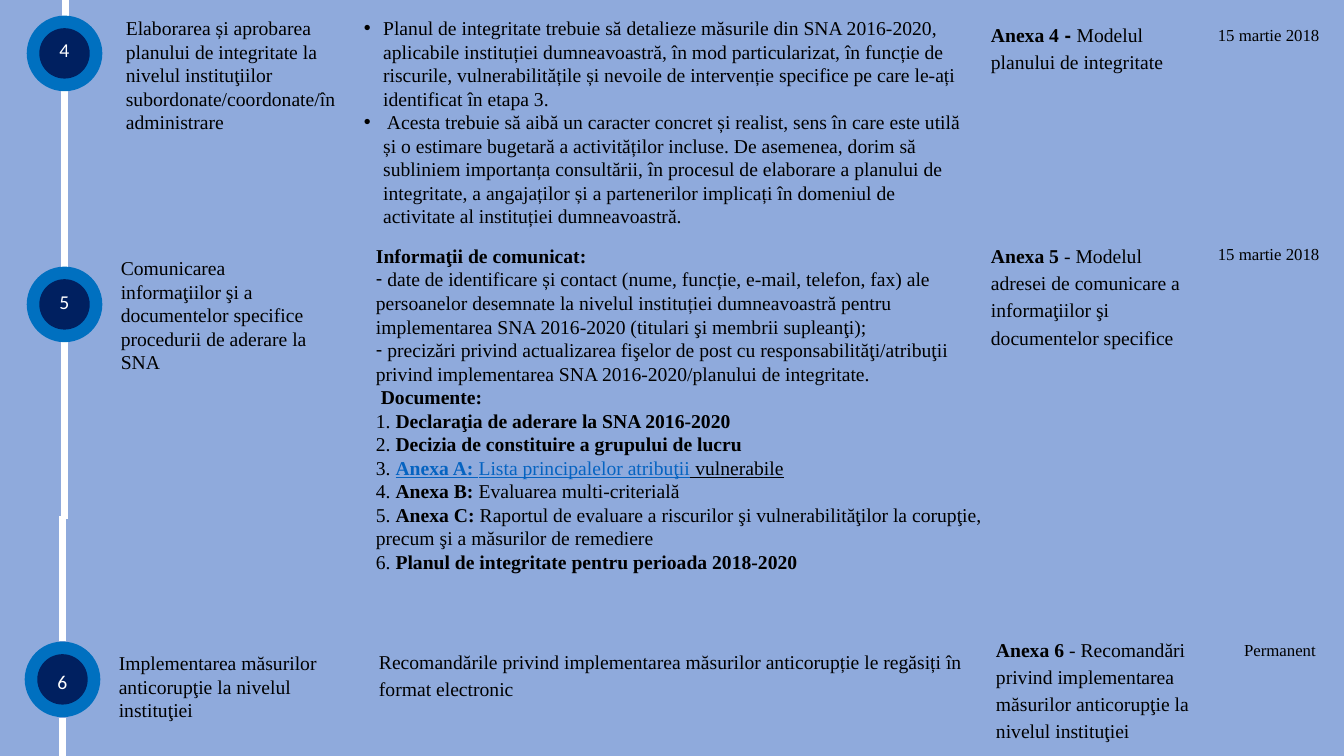
from lxml import etree
from pptx import Presentation
from pptx.dml.color import RGBColor
from pptx.enum.shapes import MSO_CONNECTOR, MSO_SHAPE
from pptx.enum.text import MSO_ANCHOR, MSO_AUTO_SIZE
from pptx.oxml.ns import qn
from pptx.util import Pt

STRAIGHT = MSO_CONNECTOR.STRAIGHT
OVAL = MSO_SHAPE.OVAL
TOP = MSO_ANCHOR.TOP
NO_FIT = MSO_AUTO_SIZE.NONE

PX = 9144  # 100 px to the inch
BACKGROUND = RGBColor(0x8F, 0xAA, 0xDC)
RING = RGBColor(0x00, 0x70, 0xC0)
CORE = RGBColor(0x00, 0x20, 0x60)
LINK = RGBColor(0x05, 0x63, 0xC1)
BLACK = RGBColor(0, 0, 0)
WHITE = RGBColor(0xFF, 0xFF, 0xFF)
SERIF = "Times New Roman"
BOLD = {"bold": True}
BOLD_LINK = {"bold": True, "underline": True, "color": LINK}
PLAIN_LINK = {"underline": True, "color": LINK}

RING_SIZE, CORE_SIZE = 75, 50

# number, centre x, centre y, top of the number
STEPS = [("4", 64, 53, 33), ("5", 64, 302, 283), ("6", 62, 674, 660)]

# x, top, bottom
TRACKS = [(64, 20, 515), (62, 512, 636), (65, 0, 16), (62, 712, 750)]

# left, top, width, height, text
ACTIVITIES = [
    (115, 11, 234, 128, "Elaborarea și aprobarea planului de integritate la nivelul "
     "instituţiilor subordonate/coordonate/în administrare"),
    (110, 249, 226, 128, "Comunicarea informaţiilor şi a documentelor specifice "
     "procedurii de aderare la SNA"),
    (108, 641, 246, 81, "Implementarea măsurilor anticorupţie la nivelul instituţiei"),
]

DEADLINES = [
    (1198, 20, 151, 30, "15 martie 2018"),
    (1198, 237, 151, 30, "15 martie 2018"),
    (1224, 630, 99, 30, "Permanent"),
]

# left, top, width, height, runs
ANNEXES = [
    (973, 14, 193, 64, [("Anexa 4", BOLD), (" - ", {"bold": True, "name": "Arial"}),
                        ("Modelul planului de integritate", {})]),
    (973, 234, 210, 118, [("Anexa 5", BOLD),
                          (" - Modelul adresei de comunicare a informaţiilor şi "
                           "documentelor specifice", {})]),
    (978, 624, 246, 118, [("Anexa 6 ", BOLD),
                          ("- Recomandări privind implementarea măsurilor anticorupţie "
                           "la nivelul instituţiei", {})]),
    (366, 636, 601, 64, [("Recomandările privind implementarea măsurilor anticorupție "
                          "le regăsiți în format electronic", {})]),
]

PLAN_RULES = [
    "Planul de integritate trebuie să detalieze măsurile din SNA 2016-2020, aplicabile "
    "instituției dumneavoastră, în mod particularizat, în funcție de riscurile, "
    "vulnerabilitățile și nevoile de intervenție specifice pe care le-ați identificat "
    "în etapa 3.",
    " Acesta trebuie să aibă un caracter concret și realist, sens în care este utilă și "
    "o estimare bugetară a activităților incluse. De asemenea, dorim să subliniem "
    "importanța consultării, în procesul de elaborare a planului de integritate, a "
    "angajaților și a partenerilor implicați în domeniul de activitate al instituției "
    "dumneavoastră.",
]

COMMUNICATED = [
    " date de identificare și contact (nume, funcție, e-mail, telefon, fax) ale "
    "persoanelor desemnate la nivelul instituției dumneavoastră pentru implementarea "
    "SNA 2016-2020 (titulari şi membrii supleanţi);",
    " precizări privind actualizarea fişelor de post cu responsabilităţi/atribuţii "
    "privind implementarea SNA 2016-2020/planului de integritate.",
]

DOCUMENTS = [
    [("Declaraţia de aderare la SNA 2016-2020", BOLD)],
    [("Decizia de constituire a grupului de lucru", BOLD)],
    [("Anexa A: ", BOLD_LINK), ("Lista principalelor atribuţii", PLAIN_LINK),
     (" vulnerabile", {"underline": True})],
    [("Anexa B: ", BOLD), ("Evaluarea multi-criterială", {})],
    [("Anexa C: ", BOLD), ("Raportul de evaluare a riscurilor şi vulnerabilităţilor la "
                           "corupţie, precum şi a măsurilor de remediere", {})],
    [("Planul de integritate pentru perioada 2018-2020", BOLD)],
]


def scaled(*lengths):
    return [length * PX for length in lengths]


def style_font(font, name=None, size=None, color=None, bold=None, underline=None):
    if name:
        font.name = name
    if size:
        font.size = Pt(size)
    if color is not None:
        font.color.rgb = color
    if bold is not None:
        font.bold = bold
    if underline is not None:
        font.underline = underline


def set_bullet(paragraph, char, indent=0):
    """Hang a bullet sign before the paragraph, indent in px."""
    properties = paragraph._p.get_or_add_pPr()
    properties.set("marL", str(indent * PX))
    properties.set("indent", str(-indent * PX))
    typeface = etree.Element(qn("a:buFont"), typeface="Arial")
    sign = etree.Element(qn("a:buChar"), char=char)
    default_font = properties.find(qn("a:defRPr"))
    default_font.addprevious(typeface)
    default_font.addprevious(sign)


def write_paragraphs(frame, paragraphs, size=14, name=SERIF, color=BLACK):
    """Fill the frame; each paragraph is a list of (text, run style)."""
    for index, runs in enumerate(paragraphs):
        paragraph = frame.add_paragraph() if index else frame.paragraphs[0]
        style_font(paragraph.font, name, size, color)
        for text, style in runs:
            run = paragraph.add_run()
            run.text = text
            style_font(run.font, **style)


def add_text(slide, left, top, width, height, paragraphs, wrap=True, **font):
    frame = slide.shapes.add_textbox(*scaled(left, top, width, height)).text_frame
    frame.word_wrap = wrap
    write_paragraphs(frame, paragraphs, **font)
    return frame


def add_track(slide, x, top, bottom):
    track = slide.shapes.add_connector(STRAIGHT, *scaled(x, top, x, bottom))
    track.line.color.rgb = WHITE
    track.line.width = Pt(5)
    etree.SubElement(track._element.spPr, qn("a:effectLst"))


def add_disc(slide, center_x, center_y, size, color):
    corner = scaled(center_x - size / 2, center_y - size / 2)
    disc = slide.shapes.add_shape(OVAL, *map(int, corner), *scaled(size, size))
    disc.shadow.inherit = False
    disc.fill.solid()
    disc.fill.fore_color.rgb = color
    disc.line.fill.background()


def add_step(slide, number, center_x, center_y, number_top):
    add_disc(slide, center_x, center_y, RING_SIZE, RING)
    add_disc(slide, center_x, center_y, CORE_SIZE, CORE)
    add_text(slide, center_x - 15, number_top, 30, 34, [[(number, {})]],
             wrap=False, name="Calibri", color=WHITE)


def fill_plan_rules(body):
    body.left, body.top, body.width, body.height = scaled(351, 11, 613, 222)
    frame = body.text_frame
    frame.auto_size = NO_FIT
    frame.vertical_anchor = TOP
    write_paragraphs(frame, [[(rule, {})] for rule in PLAN_RULES])
    for paragraph in frame.paragraphs:
        paragraph.space_before = Pt(0)
        set_bullet(paragraph, "•", 19)


def add_communication(slide):
    items = [[(item, {})] for item in COMMUNICATED]
    documents = [[(f"{number}. ", {}), *runs] for number, runs in enumerate(DOCUMENTS, 1)]
    paragraphs = [[("Informaţii de comunicat:", BOLD)], *items,
                  [("\N{NO-BREAK SPACE}Documente:", BOLD)], *documents]
    frame = add_text(slide, 363, 237, 632, 340, paragraphs)
    for paragraph in frame.paragraphs[1:1 + len(items)]:
        set_bullet(paragraph, "-")


def main():
    presentation = Presentation()
    presentation.slide_width, presentation.slide_height = scaled(1333, 750)
    slide = presentation.slides.add_slide(presentation.slide_layouts[1])
    slide.background.fill.solid()
    slide.background.fill.fore_color.rgb = BACKGROUND
    unused_title = slide.shapes.title.element
    unused_title.getparent().remove(unused_title)

    fill_plan_rules(slide.placeholders[1])
    for track in TRACKS:
        add_track(slide, *track)
    for step in STEPS:
        add_step(slide, *step)
    for *box, text in ACTIVITIES:
        add_text(slide, *box, [[(text, {})]])
    add_communication(slide)
    for *box, runs in ANNEXES:
        paragraph = add_text(slide, *box, [runs]).paragraphs[0]
        paragraph.line_spacing = 1.15
        paragraph.space_after = Pt(10)
    for *box, text in DEADLINES:
        add_text(slide, *box, [[(text, {})]], size=12)
    presentation.save("out.pptx")


if __name__ == "__main__":
    main()
